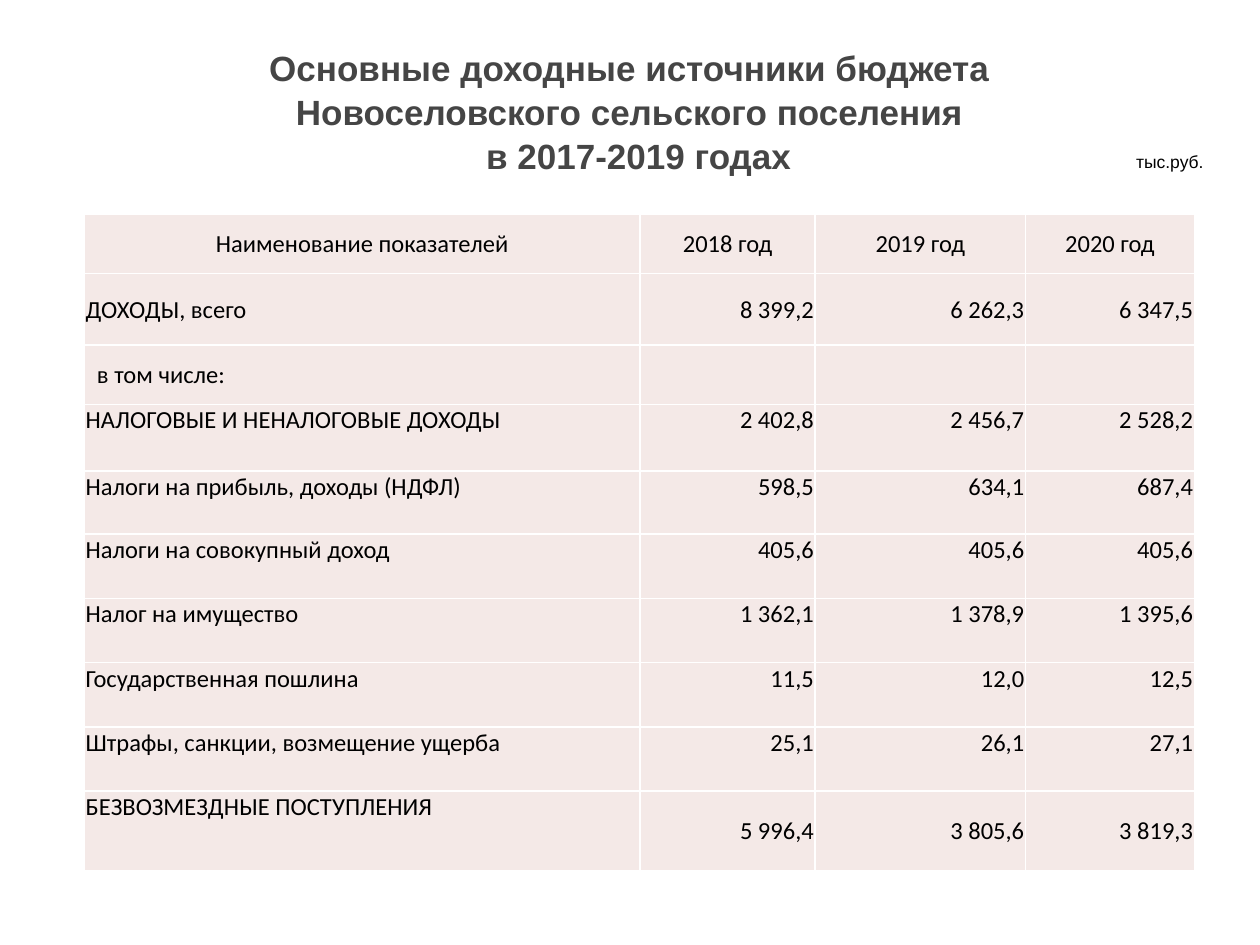
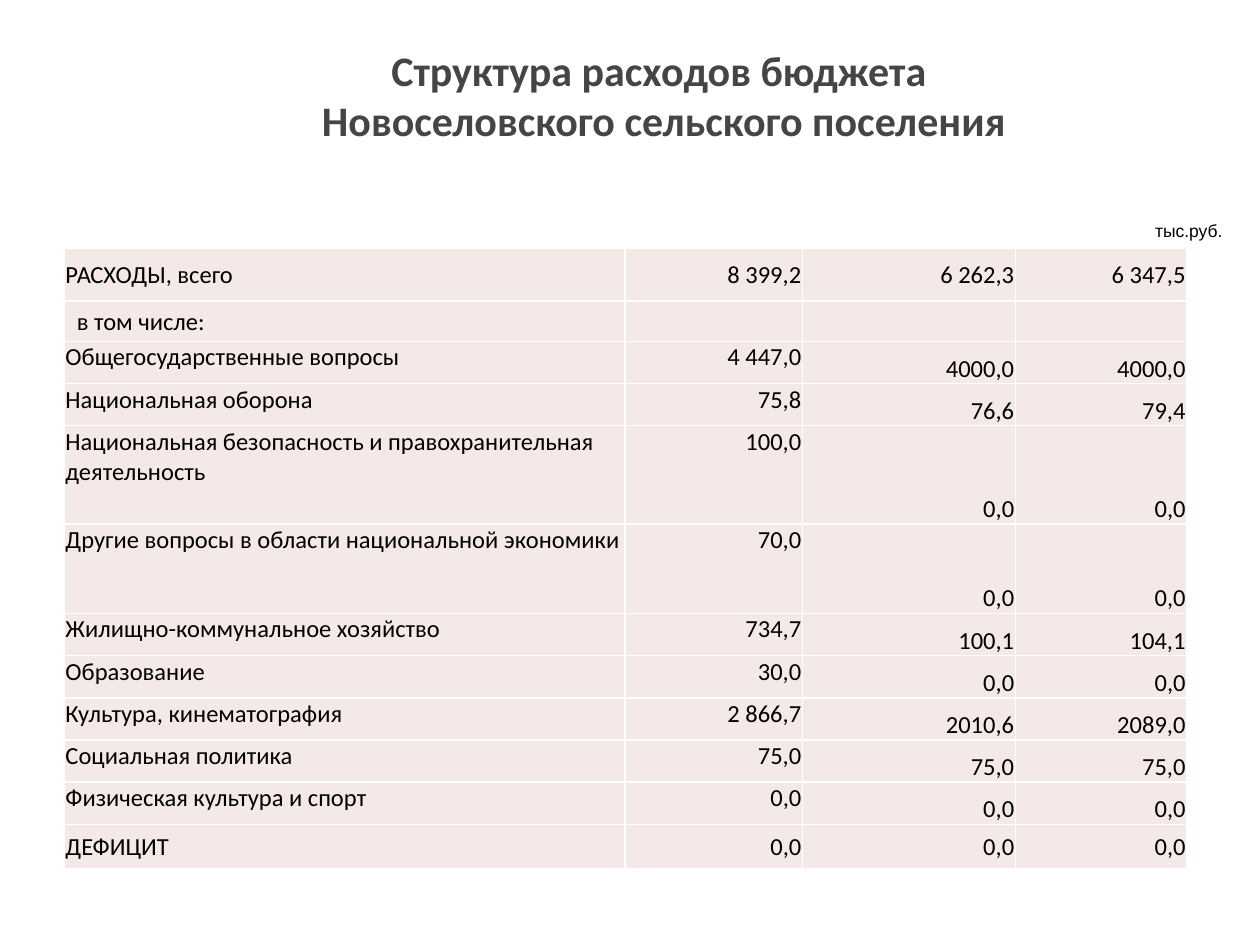
from dataclasses import dataclass

from lxml import etree
from pptx import Presentation
from pptx.dml.color import RGBColor
from pptx.enum import text
from pptx.oxml import ns
from pptx.util import Inches, Pt

TITLE_GREY = RGBColor(0x45, 0x45, 0x45)
BLACK = RGBColor(0, 0, 0)
CELL_PINK = RGBColor(0xF4, 0xE9, 0xE7)
BORDER_WHITE = RGBColor(0xFF, 0xFF, 0xFF)
LEFT, CENTER, RIGHT = text.PP_ALIGN.LEFT, text.PP_ALIGN.CENTER, text.PP_ALIGN.RIGHT
TOP, MIDDLE, BOTTOM = text.MSO_ANCHOR.TOP, text.MSO_ANCHOR.MIDDLE, text.MSO_ANCHOR.BOTTOM
ALL_TOP = (TOP,) * 4
ALL_MIDDLE = (MIDDLE,) * 4
LABEL_TOP = (TOP, MIDDLE, MIDDLE, MIDDLE)
FORECAST_BOTTOM = (TOP, TOP, BOTTOM, BOTTOM)


@dataclass
class Row:
    height: float
    label: str
    values: tuple = ("", "", "")
    anchors: tuple = ALL_TOP
    indent: float = 0
    header: bool = False


@dataclass
class TitleStyle:
    font: str
    size: int
    spacing: float


@dataclass
class BudgetPage:
    title_lines: list
    title_at: tuple
    title_style: TitleStyle
    unit_at: tuple
    table_at: tuple
    columns: tuple
    rows: list


def subtotal_heading(height: float) -> Row:
    return Row(height, "в том числе:", anchors=ALL_MIDDLE, indent=0.09)


INCOME = BudgetPage(
    title_lines=[
        ("Основные доходные источники бюджета Новоселовского сельского поселения", 0),
        ("в 2017-2019 годах", 0.15),
    ],
    title_at=(1.21, 0.28, 7.57, 1.25),
    title_style=TitleStyle("Arial", 20, 1.05),
    unit_at=(7.92, 1.15, 1.73, 0.27),
    table_at=(0.67, 1.7),
    columns=(4.41, 1.39, 1.67, 1.34),
    rows=[
        Row(0.47, "Наименование показателей", ("2018 год", "2019 год", "2020 год"),
            ALL_MIDDLE, header=True),
        Row(0.57, "ДОХОДЫ, всего", ("8 399,2", "6 262,3", "6 347,5"), ALL_MIDDLE),
        subtotal_heading(0.47),
        Row(0.53, "НАЛОГОВЫЕ И НЕНАЛОГОВЫЕ ДОХОДЫ", ("2 402,8", "2 456,7", "2 528,2")),
        Row(0.5, "Налоги на прибыль, доходы (НДФЛ)", ("598,5", "634,1", "687,4")),
        Row(0.51, "Налоги на совокупный доход", ("405,6", "405,6", "405,6")),
        Row(0.51, "Налог на имущество", ("1 362,1", "1 378,9", "1 395,6")),
        Row(0.51, "Государственная пошлина", ("11,5", "12,0", "12,5")),
        Row(0.51, "Штрафы, санкции, возмещение ущерба", ("25,1", "26,1", "27,1")),
        Row(0.63, "БЕЗВОЗМЕЗДНЫЕ ПОСТУПЛЕНИЯ", ("5 996,4", "3 805,6", "3 819,3"), LABEL_TOP),
    ],
)


def expense(label: str, *values: str, height: float = 0.335) -> Row:
    return Row(height, label, values, FORECAST_BOTTOM)


EXPENSES = BudgetPage(
    title_lines=[
        ("Структура расходов бюджета", 0),
        ("Новоселовского сельского поселения", 0.08),
    ],
    title_at=(0.98, 0.28, 8.5, 1.25),
    title_style=TitleStyle("Calibri", 24, 1),
    unit_at=(8.07, 1.7, 1.73, 0.27),
    table_at=(0.51, 1.97),
    columns=(4.45, 1.41, 1.69, 1.36),
    rows=[
        Row(0.42, "РАСХОДЫ, всего", ("8 399,2", "6 262,3", "6 347,5"), ALL_MIDDLE),
        subtotal_heading(0.32),
        expense("Общегосударственные вопросы", "4 447,0", "4000,0", "4000,0"),
        expense("Национальная оборона", "75,8", "76,6", "79,4"),
        expense("Национальная безопасность и правохранительная деятельность",
                "100,0", "0,0", "0,0", height=0.78),
        expense("Другие вопросы в области национальной экономики",
                "70,0", "0,0", "0,0", height=0.71),
        expense("Жилищно-коммунальное хозяйство", "734,7", "100,1", "104,1"),
        expense("Образование", "30,0", "0,0", "0,0"),
        expense("Культура, кинематография", "2 866,7", "2010,6", "2089,0"),
        expense("Социальная политика", "75,0", "75,0", "75,0"),
        expense("Физическая культура и спорт", "0,0", "0,0", "0,0"),
        Row(0.35, "ДЕФИЦИТ", ("0,0", "0,0", "0,0"), ALL_MIDDLE),
    ],
)


def write(para, words: str, *, font: str = "Calibri", size: int = 14,
          color: RGBColor = BLACK, bold: bool = False, align=LEFT,
          spacing: float = 1, indent: float = 0) -> None:
    para.alignment = align
    para.line_spacing = spacing
    if indent:
        para._p.get_or_add_pPr().set("marL", str(Inches(indent)))
    if not words:
        return
    span = para.add_run()
    span.text = words
    span.font.name = font
    span.font.size = Pt(size)
    span.font.bold = bold
    span.font.color.rgb = color


def add_box(page, at: tuple):
    frame = page.shapes.add_textbox(*map(Inches, at)).text_frame
    frame.word_wrap = True
    return frame


def add_title(page, content: BudgetPage) -> None:
    frame = add_box(page, content.title_at)
    frame.margin_top = Inches(0.07)
    style = content.title_style
    for number, (line, indent) in enumerate(content.title_lines):
        para = frame.add_paragraph() if number else frame.paragraphs[0]
        write(para, line, font=style.font, size=style.size, color=TITLE_GREY,
              bold=True, align=CENTER, spacing=style.spacing, indent=indent)


def add_unit(page, at: tuple) -> None:
    frame = add_box(page, at)
    frame.auto_size = text.MSO_AUTO_SIZE.SHAPE_TO_FIT_TEXT
    write(frame.paragraphs[0], "тыс.руб.", font="Arial", size=10, align=RIGHT)


def add_borders(cell) -> None:
    properties = cell._tc.get_or_add_tcPr()
    for side in ("lnL", "lnR", "lnT", "lnB"):
        line = etree.SubElement(properties, ns.qn(f"a:{side}"), w=str(Pt(1)))
        fill = etree.SubElement(line, ns.qn("a:solidFill"))
        etree.SubElement(fill, ns.qn("a:srgbClr"), val=str(BORDER_WHITE))


def fill_cell(cell, words: str, *, anchor, align, indent: float) -> None:
    add_borders(cell)
    cell.fill.solid()
    cell.fill.fore_color.rgb = CELL_PINK
    cell.margin_left = Inches(0.01 + indent)
    cell.margin_right = cell.margin_top = Inches(0.01)
    cell.margin_bottom = 0
    cell.vertical_anchor = anchor
    write(cell.text_frame.paragraphs[0], words, align=align)


def add_budget_table(page, content: BudgetPage) -> None:
    size = sum(content.columns), sum(row.height for row in content.rows)
    table = page.shapes.add_table(len(content.rows), len(content.columns),
                                  *map(Inches, content.table_at + size)).table
    table.first_row = table.horz_banding = False
    for column, width in zip(table.columns, content.columns):
        column.width = Inches(width)
    for number, row in enumerate(content.rows):
        table.rows[number].height = Inches(row.height)
        for position, words in enumerate((row.label, *row.values)):
            align = CENTER if row.header else RIGHT if position else LEFT
            fill_cell(table.cell(number, position), words, anchor=row.anchors[position],
                      align=align, indent=0 if position else row.indent)


def main() -> None:
    deck = Presentation()
    deck.slide_width, deck.slide_height = Inches(10), Inches(7.5)
    for content in (INCOME, EXPENSES):
        page = deck.slides.add_slide(deck.slide_layouts[6])
        add_title(page, content)
        add_unit(page, content.unit_at)
        add_budget_table(page, content)
    deck.save("out.pptx")


if __name__ == "__main__":
    main()
